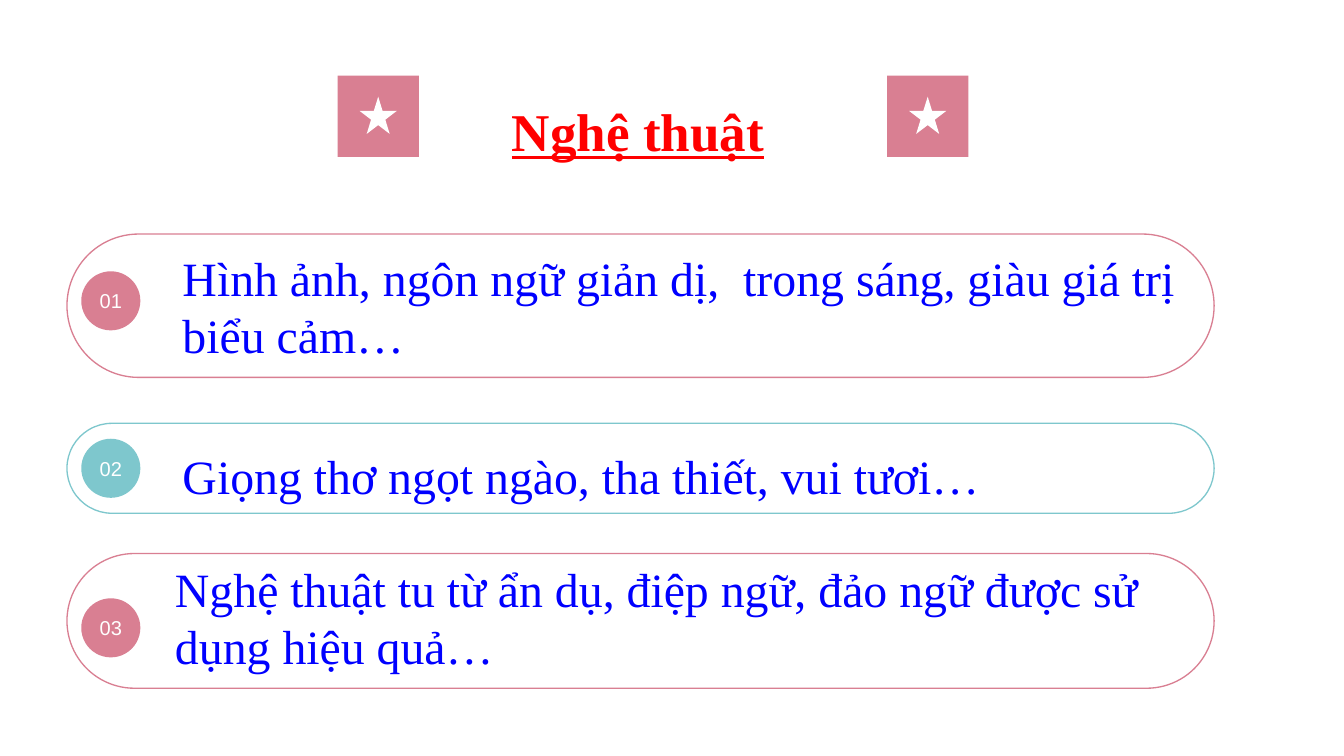
from dataclasses import dataclass

from pptx import Presentation
from pptx.dml.color import RGBColor
from pptx.enum.shapes import MSO_SHAPE
from pptx.enum.text import MSO_ANCHOR, MSO_AUTO_SIZE, PP_ALIGN
from pptx.util import Cm, Pt

# Content: lengths in cm
HEADING = "Nghệ thuật"
POINTS = [
    {"text": "Hình ảnh, ngôn ngữ giản dị,  trong sáng, giàu giá trị biểu cảm…",
     "accent": "pink", "pill": (6.22, 3.81), "badge_top": 7.21,
     "text_box": (4.52, 6.45, 27.94, 3.4), "spacing": 1.0},
    {"text": "Giọng thơ ngọt ngào, tha thiết, vui tươi…",
     "accent": "teal", "pill": (11.25, 2.39), "badge_top": 11.66,
     "text_box": (4.52, 11.1, 23.93, 2.46), "spacing": 1.4},
    {"text": "Nghệ thuật tu từ ẩn dụ, điệp ngữ, đảo ngữ được sử dụng hiệu quả…",
     "accent": "pink", "pill": (14.71, 3.58), "badge_top": 15.9,
     "text_box": (4.32, 14.71, 27.94, 3.4), "spacing": 1.0},
]

# Layout
SLIDE_SIZE = (35.71, 20.09)
HEADING_BOX = (10.03, 1.78, 13.84, 2.46)
TILE_LEFTS, TILE_TOP, TILE_SIZE = (8.97, 23.57), 2.01, 2.16
STAR_SIZE, STAR_DROP = 0.99, 0.56
PILL_LEFT, PILL_WIDTH = 1.78, 30.48
BADGE_LEFT, BADGE_SIZE = 2.16, 1.57
TEXT_INSETS, BADGE_INSETS = (0.33, 0.16), (0.2, 0.1)


@dataclass(frozen=True)
class Theme:
    pink: RGBColor = RGBColor(0xD9, 0x7F, 0x92)
    teal: RGBColor = RGBColor(0x7E, 0xC7, 0xCD)
    white: RGBColor = RGBColor(0xFF, 0xFF, 0xFF)
    red: RGBColor = RGBColor(0xFF, 0x00, 0x00)
    blue: RGBColor = RGBColor(0x00, 0x00, 0xFF)
    serif: str = "Times New Roman"
    sans: str = "Arial"
    heading_size: float = 40
    point_size: float = 36
    badge_size: float = 15.1
    outline: float = 1


THEME = Theme()


def cm_box(box):
    return [Cm(length) for length in box]


def add_plain_shape(slide, kind, box, fill=None, outline=None):
    shape = slide.shapes.add_shape(kind, *cm_box(box))
    shape.shadow.inherit = False
    if fill is None:
        shape.fill.background()
    else:
        shape.fill.solid()
        shape.fill.fore_color.rgb = fill
    if outline is None:
        shape.line.fill.background()
    else:
        shape.line.color.rgb = outline
        shape.line.width = Pt(THEME.outline)
    return shape


def write(shape, text, font_name, size, color, insets=TEXT_INSETS,
          align=PP_ALIGN.LEFT, anchor=MSO_ANCHOR.TOP, spacing=1.0):
    frame = shape.text_frame
    frame.text = text
    frame.word_wrap = True
    frame.vertical_anchor = anchor
    frame.margin_left = frame.margin_right = Cm(insets[0])
    frame.margin_top = frame.margin_bottom = Cm(insets[1])
    paragraph = frame.paragraphs[0]
    paragraph.alignment = align
    paragraph.line_spacing = spacing
    font = paragraph.runs[0].font
    font.name, font.size, font.color.rgb = font_name, Pt(size), color
    return font


def add_heading(slide):
    heading = slide.shapes.title
    heading.left, heading.top, heading.width, heading.height = cm_box(HEADING_BOX)
    font = write(heading, HEADING, THEME.serif, THEME.heading_size, THEME.red,
                 align=PP_ALIGN.CENTER, spacing=1.4)
    font.bold = font.underline = True
    heading.text_frame.auto_size = MSO_AUTO_SIZE.SHAPE_TO_FIT_TEXT


def add_star_tile(slide, left):
    add_plain_shape(slide, MSO_SHAPE.RECTANGLE,
                    (left, TILE_TOP, TILE_SIZE, TILE_SIZE), fill=THEME.pink)
    star_left = left + (TILE_SIZE - STAR_SIZE) / 2
    add_plain_shape(slide, MSO_SHAPE.STAR_5_POINT,
                    (star_left, TILE_TOP + STAR_DROP, STAR_SIZE, STAR_SIZE),
                    fill=THEME.white)


def add_point(slide, number, point):
    accent = getattr(THEME, point["accent"])
    pill_top, pill_height = point["pill"]
    pill = add_plain_shape(slide, MSO_SHAPE.ROUNDED_RECTANGLE,
                           (PILL_LEFT, pill_top, PILL_WIDTH, pill_height),
                           outline=accent)
    pill.adjustments[0] = 0.5

    badge = add_plain_shape(slide, MSO_SHAPE.OVAL,
                            (BADGE_LEFT, point["badge_top"], BADGE_SIZE, BADGE_SIZE),
                            fill=accent)
    write(badge, f"{number:02d}", THEME.sans, THEME.badge_size, THEME.white,
          BADGE_INSETS, PP_ALIGN.CENTER, MSO_ANCHOR.MIDDLE)

    statement = slide.shapes.add_textbox(*cm_box(point["text_box"]))
    write(statement, point["text"], THEME.serif, THEME.point_size, THEME.blue,
          spacing=point["spacing"])
    statement.text_frame.auto_size = MSO_AUTO_SIZE.SHAPE_TO_FIT_TEXT


def main():
    deck = Presentation()
    deck.slide_width, deck.slide_height = cm_box(SLIDE_SIZE)
    slide = deck.slides.add_slide(deck.slide_layouts[5])

    # Heading between two star tiles
    add_heading(slide)
    for left in TILE_LEFTS:
        add_star_tile(slide, left)

    # Numbered points
    for number, point in enumerate(POINTS, start=1):
        add_point(slide, number, point)

    deck.save("out.pptx")


if __name__ == "__main__":
    main()
